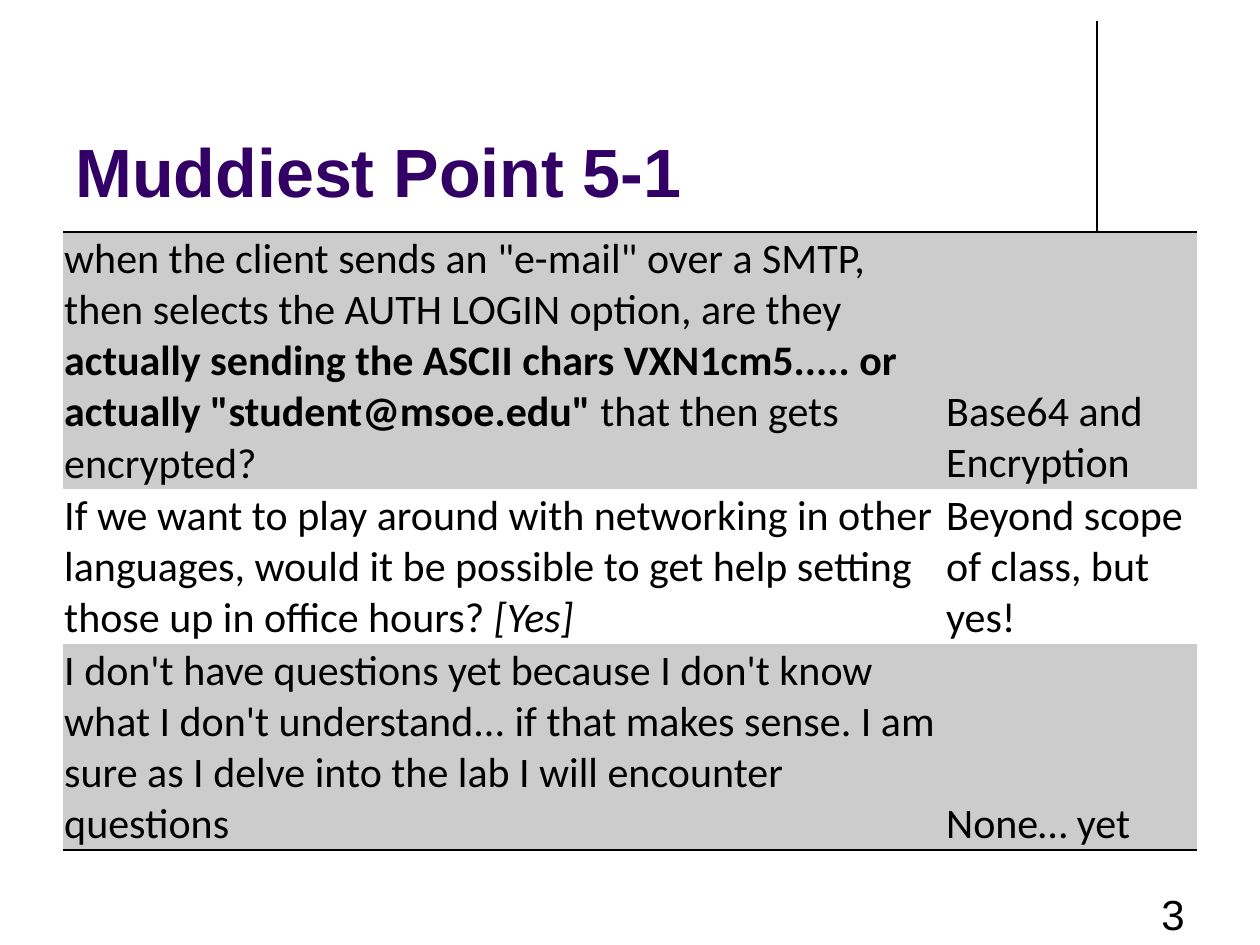
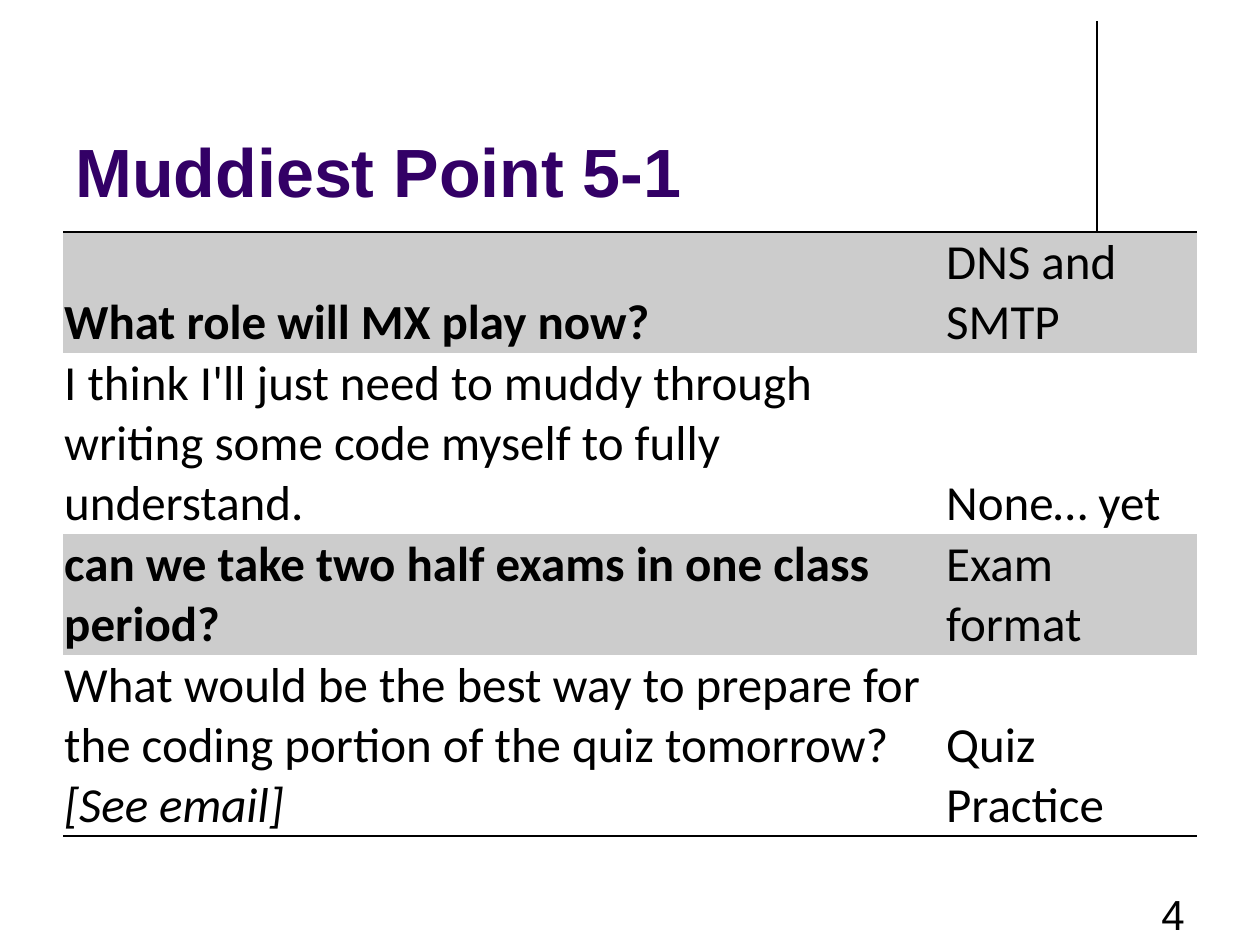
"""Build two question-and-topic slides with a shared title, rule and page number."""
from lxml import etree
from pptx import Presentation, util as u
from pptx.dml.color import RGBColor
from pptx.enum import shapes, text
from pptx.oxml import ns

COLORS = {"title": "330066", "ink": "000000", "band": "CCCCCC"}
NO_STYLE = "{2D5ABB26-0587-4C30-8999-92F81FD0307C}"
TITLE_FONT = {"name": "Arial", "size": u.Pt(39), "bold": True}
NUMBER_FONT = {"name": "Arial", "size": u.Pt(24)}
CELL_FORMAT = {"margin_left": u.Inches(0.01), "margin_right": u.Inches(0.01),
               "margin_top": u.Inches(0.01), "margin_bottom": 0,
               "vertical_anchor": text.MSO_ANCHOR.BOTTOM}
LEFT, TABLE_TOP, COLUMN_WIDTHS = 63, 232, (882, 252)
PLAIN, BOLD, ITALIC = {}, {"bold": True}, {"italic": True}

SLIDES = [
    {"number": 3, "size": 24, "rows": [
        (257, [('when the client sends an "e-mail" over a SMTP, then selects the '
                'AUTH LOGIN option, are they ', PLAIN),
               ('actually sending the ASCII chars VXN1cm5..... or actually '
                '"student@msoe.edu"', BOLD),
               (" that then gets encrypted?", PLAIN)], "Base64 and Encryption"),
        (155, [("If we want to play around with networking in other languages, would "
                "it be possible to get help setting those up in office hours? ", PLAIN),
               ("[Yes]", ITALIC)], "Beyond scope of class, but yes!"),
        (206, [("I don't have questions yet because I don't know what I don't "
                "understand... if that makes sense. I am sure as I delve into the lab "
                "I will encounter questions", PLAIN)], "None… yet"),
    ]},
    {"number": 4, "size": 28, "rows": [
        (121, [("What role will MX play now?", BOLD)], "DNS and SMTP"),
        (181, [("I think I'll just need to muddy through writing some code myself to "
                "fully understand.", PLAIN)], "None… yet"),
        (121, [("can we take two half exams in one class period?", BOLD)], "Exam format"),
        (181, [("What would be the best way to prepare for the coding portion of the "
                "quiz tomorrow? ", PLAIN),
               ("[See email]", ITALIC)], "Quiz Practice"),
    ]},
]


def px(count):
    return u.Emu(round(count * 914400 / 126))


def add_span(para, words, color, font_format):
    span = para.add_run()
    span.text = words
    span.font.color.rgb = RGBColor.from_string(COLORS[color])
    for name, value in font_format.items():
        setattr(span.font, name, value)


deck = Presentation()
deck.slide_width, deck.slide_height = px(1260), px(945)

for content in SLIDES:
    page = deck.slides.add_slide(deck.slide_layouts[6])

    rule = page.shapes.add_connector(
        shapes.MSO_CONNECTOR.STRAIGHT, px(1097), px(21), px(1097), px(231))
    rule.line.width = u.Pt(0.75)
    rule.line.color.rgb = RGBColor.from_string(COLORS["ink"])
    etree.SubElement(rule._element.spPr, ns.qn("a:effectLst"))

    title = page.shapes.add_textbox(px(LEFT), px(38), px(1040), px(179))
    title.text_frame.word_wrap = True
    title.text_frame.vertical_anchor = text.MSO_ANCHOR.BOTTOM
    add_span(title.text_frame.paragraphs[0], "Muddiest Point 5-1", "title", TITLE_FONT)

    rows = content["rows"]
    frame = page.shapes.add_table(
        len(rows), len(COLUMN_WIDTHS), px(LEFT), px(TABLE_TOP),
        px(sum(COLUMN_WIDTHS)), px(sum(height for height, _, _ in rows)))
    table = frame.table
    table.first_row = table.horz_banding = False
    table._tbl.tblPr.find(ns.qn("a:tableStyleId")).text = NO_STYLE
    for column, width in zip(table.columns, COLUMN_WIDTHS):
        column.width = px(width)

    edges = {0: "a:lnT", len(rows) - 1: "a:lnB"}
    cell_font = {"name": "Calibri", "size": u.Pt(content["size"])}
    for index, (height, question, topic) in enumerate(rows):
        table.rows[index].height = px(height)
        for cell, spans in zip(table.rows[index].cells, (question, [(topic, PLAIN)])):
            for name, value in CELL_FORMAT.items():
                setattr(cell, name, value)
            for words, emphasis in spans:
                add_span(cell.text_frame.paragraphs[0], words, "ink",
                         {**cell_font, **emphasis})
            if index % 2 == 0:
                cell.fill.solid()
                cell.fill.fore_color.rgb = RGBColor.from_string(COLORS["band"])
            else:
                cell.fill.background()
            if index in edges:
                border = etree.Element(ns.qn(edges[index]), w=str(u.Pt(1)))
                paint = etree.SubElement(border, ns.qn("a:solidFill"))
                etree.SubElement(paint, ns.qn("a:srgbClr"), val=COLORS["ink"])
                cell._tc.get_or_add_tcPr().insert(0, border)

    number = page.shapes.add_textbox(px(903), px(882), px(294), px(63))
    number.text_frame.word_wrap = True
    para = number.text_frame.paragraphs[0]
    para.alignment = text.PP_ALIGN.RIGHT
    add_span(para, str(content["number"]), "ink", NUMBER_FONT)

deck.save("out.pptx")
